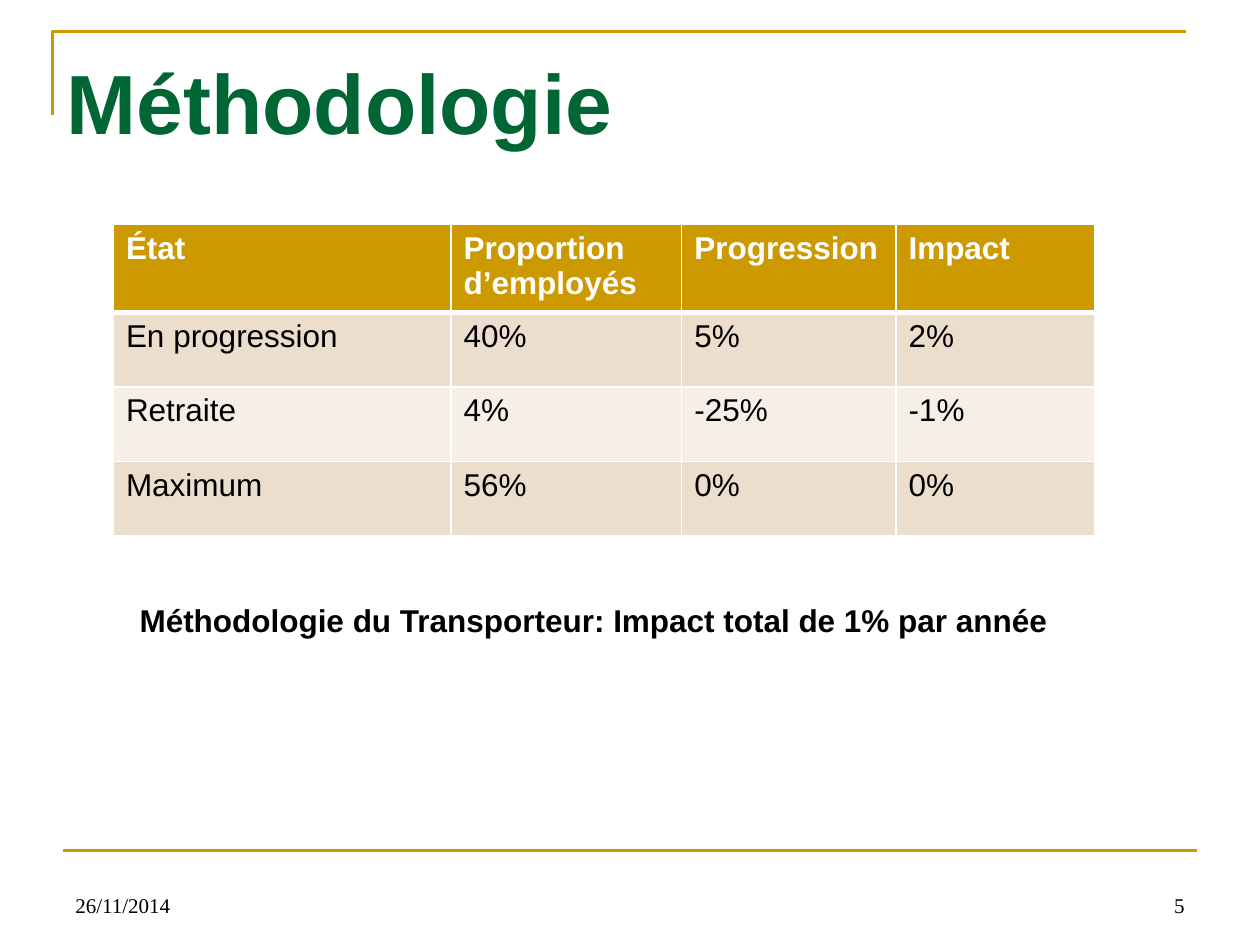
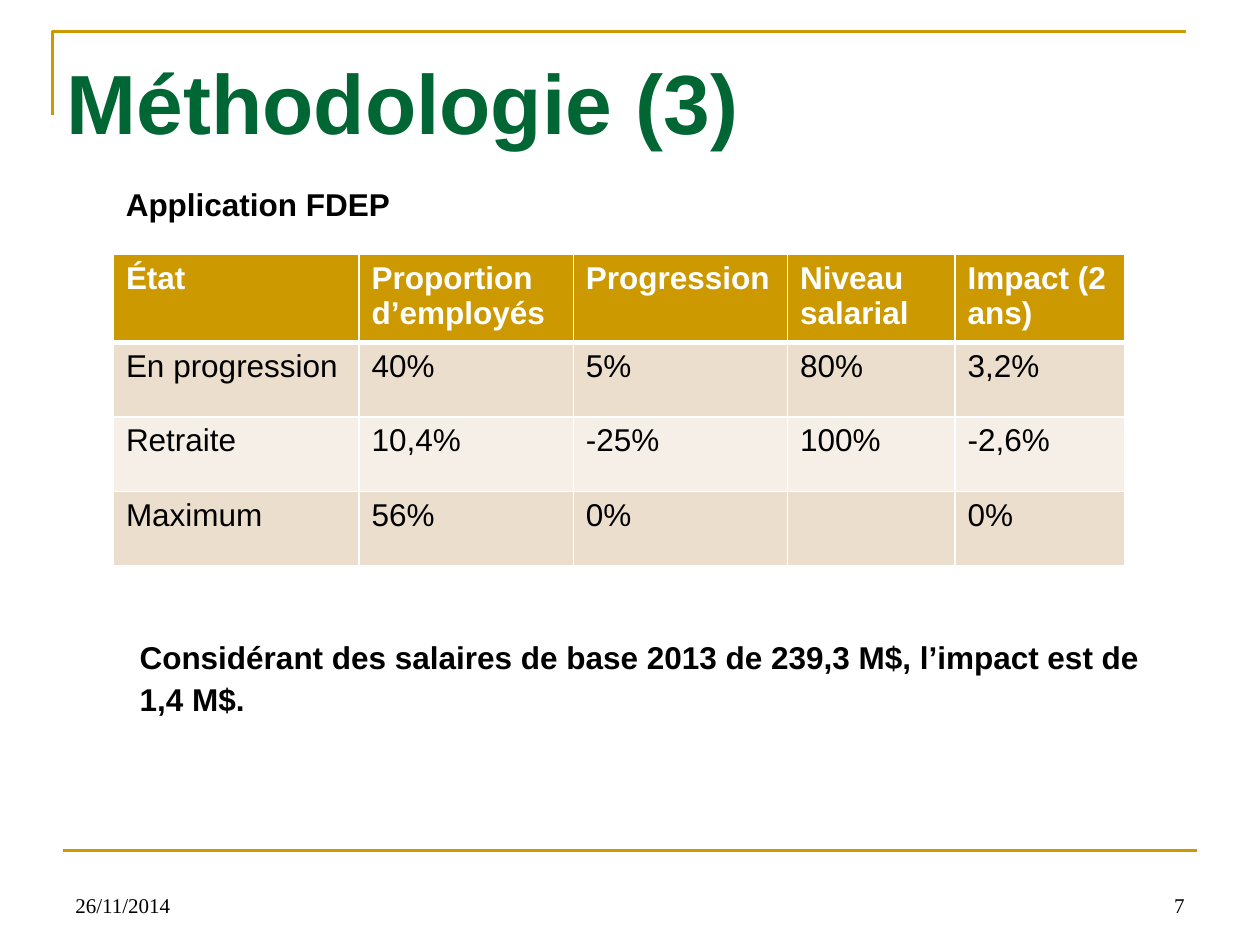
from dataclasses import dataclass

from lxml.etree import SubElement
from pptx import Presentation
from pptx.dml.color import RGBColor
from pptx.enum.shapes import MSO_CONNECTOR
from pptx.enum.text import MSO_ANCHOR, MSO_AUTO_SIZE, PP_ALIGN
from pptx.oxml.ns import qn
from pptx.util import Pt


@dataclass(frozen=True)
class Theme:
    gold: str = "CC9900"
    green: str = "006633"
    black: str = "000000"
    white: str = "FFFFFF"
    bands: tuple = ("ECDECC", "F6EFE7")
    sans: str = "Arial"
    serif: str = "Times New Roman"
    title_size: float = 48
    body_size: float = 18
    footer_size: float = 12
    rule_width: float = 1.5
    spacing: float = 1.09


THEME = Theme()
DATE = "26/11/2014"
ROW_HEIGHTS = (50.4, 42.5, 42.5, 42.5)


def rgb(color):
    return RGBColor.from_string(color)


def add_run(p, text, size=THEME.body_size, color=THEME.black, font=THEME.sans, bold=False):
    r = p.add_run()
    r.text = text
    r.font.name = font
    r.font.size = Pt(size)
    r.font.bold = bold
    r.font.color.rgb = rgb(color)


def place(shape, left, top, width, height):
    shape.left, shape.top = Pt(left), Pt(top)
    shape.width, shape.height = Pt(width), Pt(height)


def add_title(s, text):
    sp = s.shapes.title
    place(sp, 31, 20.2, 648, 68.4)
    tf = sp.text_frame
    tf.auto_size = MSO_AUTO_SIZE.NONE
    tf.vertical_anchor = MSO_ANCHOR.TOP
    p = tf.paragraphs[0]
    p.alignment = PP_ALIGN.LEFT
    p.line_spacing = THEME.spacing
    add_run(p, text, THEME.title_size, THEME.green, bold=True)


def add_text_box(s, left, top, width, height):
    sp = s.shapes.add_textbox(Pt(left), Pt(top), Pt(width), Pt(height))
    tf = sp.text_frame
    tf.word_wrap = True
    return tf


def add_statement(s, text, left, top, width, height, indent=0):
    tf = add_text_box(s, left, top, width, height)
    p = tf.paragraphs[0]
    p.line_spacing = THEME.spacing
    if indent:
        pPr = p._p.get_or_add_pPr()
        pPr.set("marL", str(Pt(indent)))
        pPr.set("indent", "0")
    add_run(p, text, bold=True)


def add_footer(s, text, left, alignment):
    tf = add_text_box(s, left, 492, 168, 36)
    tf.vertical_anchor = MSO_ANCHOR.BOTTOM
    p = tf.paragraphs[0]
    p.alignment = alignment
    add_run(p, text, THEME.footer_size, font=THEME.serif)


def style_rule(line):
    line.color.rgb = rgb(THEME.gold)
    line.width = Pt(THEME.rule_width)


def add_frame(s):
    builder = s.shapes.build_freeform(Pt(30), Pt(66))
    builder.add_line_segments([(Pt(30), Pt(18)), (Pt(678), Pt(18))], close=False)
    corner = builder.convert_to_shape()
    corner.shadow.inherit = False
    corner.fill.background()
    style_rule(corner.line)
    rule = s.shapes.add_connector(MSO_CONNECTOR.STRAIGHT, Pt(36), Pt(486), Pt(684), Pt(486))
    style_rule(rule.line)
    SubElement(rule._element.spPr, qn("a:effectLst"))


def add_border(cell, side, width):
    ln = SubElement(cell._tc.get_or_add_tcPr(), qn(f"a:ln{side}"), w=str(Pt(width)))
    fill = SubElement(ln, qn("a:solidFill"))
    SubElement(fill, qn("a:srgbClr"), val=THEME.white)


def style_cell(cell, text, row):
    header = row == 0
    widths = {"L": 1, "R": 1, "T": 3 if row == 1 else 1, "B": 3 if header else 1}
    for side, width in widths.items():
        add_border(cell, side, width)
    cell.fill.solid()
    cell.fill.fore_color.rgb = rgb(THEME.gold if header else THEME.bands[(row - 1) % 2])
    if text:
        color = THEME.white if header else THEME.black
        add_run(cell.text_frame.paragraphs[0], text, color=color, bold=header)


def add_impact_table(s, top, col_widths, rows):
    frame = s.shapes.add_table(
        len(rows), len(col_widths), Pt(64.8), Pt(top), Pt(sum(col_widths)), Pt(sum(ROW_HEIGHTS))
    )
    table = frame.table
    for column, width in zip(table.columns, col_widths):
        column.width = Pt(width)
    for i, (texts, height) in enumerate(zip(rows, ROW_HEIGHTS)):
        table.rows[i].height = Pt(height)
        for j, text in enumerate(texts):
            style_cell(table.cell(i, j), text, i)


def add_base_slide(prs, title, number):
    s = prs.slides.add_slide(prs.slide_layouts[5])
    add_frame(s)
    add_title(s, title)
    add_footer(s, DATE, 36, PP_ALIGN.LEFT)
    add_footer(s, number, 516, PP_ALIGN.RIGHT)
    return s


def main():
    prs = Presentation()
    prs.slide_width, prs.slide_height = Pt(720), Pt(540)

    s = add_base_slide(prs, "Méthodologie", "5")
    add_impact_table(s, 128.2, (193, 131.8, 122.4, 113.6), [
        ("État", "Proportion d’employés", "Progression", "Impact"),
        ("En progression", "40%", "5%", "2%"),
        ("Retraite", "4%", "-25%", "-1%"),
        ("Maximum", "56%", "0%", "0%"),
    ])
    add_statement(s, "Méthodologie du Transporteur: Impact total de 1% par année",
                  36.7, 337.7, 640.8, 51, indent=36)

    s = add_base_slide(prs, "Méthodologie (3)", "7")
    add_statement(s, "Application FDEP", 64.8, 100, 450, 29)
    add_impact_table(s, 145.4, (140.4, 122.4, 122.4, 95.8, 97.2), [
        ("État", "Proportion d’employés", "Progression", "Niveau salarial", "Impact (2 ans)"),
        ("En progression", "40%", "5%", "80%", "3,2%"),
        ("Retraite", "10,4%", "-25%", "100%", "-2,6%"),
        ("Maximum", "56%", "0%", "", "0%"),
    ])
    add_statement(s, "Considérant des salaires de base 2013 de 239,3 M$, l’impact est de 1,4 M$.",
                  36.7, 359.3, 640.8, 72.7, indent=36)

    prs.save("out.pptx")


if __name__ == "__main__":
    main()
